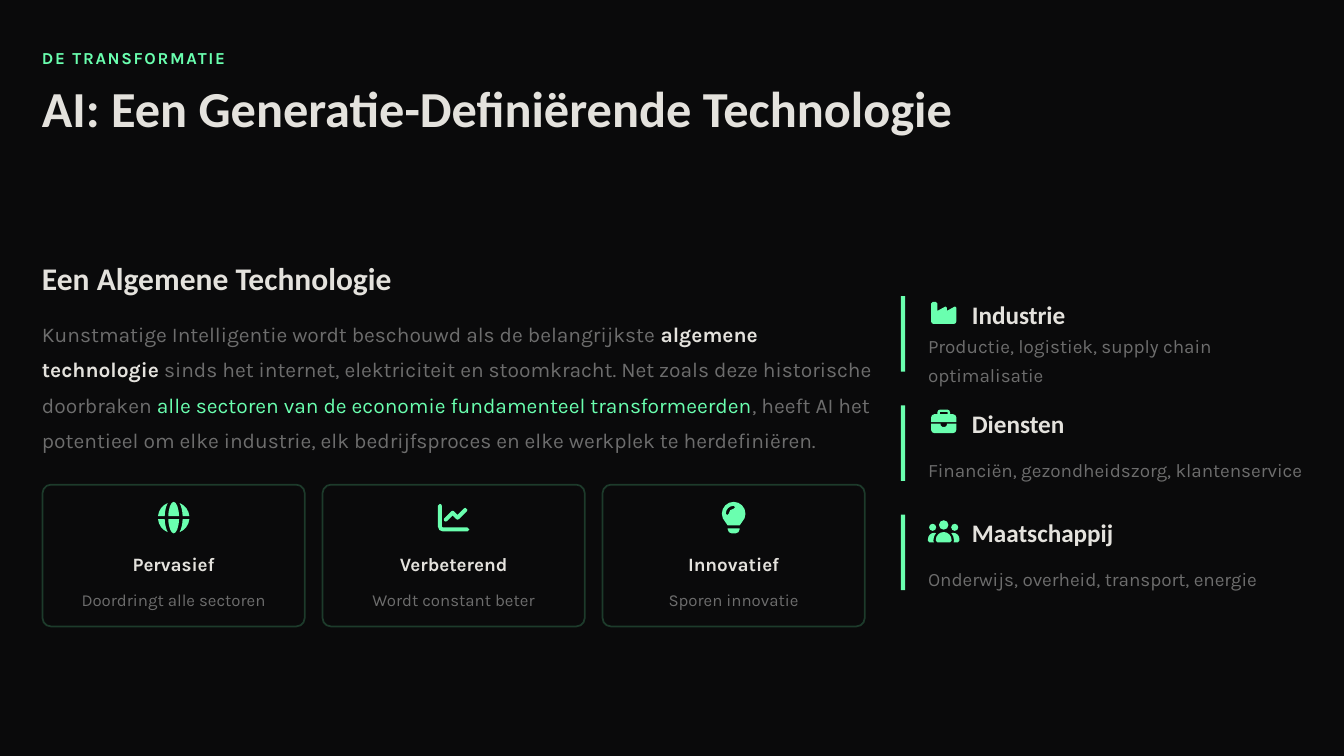
from math import ceil, cos, floor, radians, sin, tan

from lxml.etree import SubElement
from pptx import Presentation
from pptx.dml.color import RGBColor
from pptx.enum.shapes import MSO_SHAPE as Preset
from pptx.enum.text import MSO_ANCHOR as Anchor, PP_ALIGN as Align
from pptx.oxml.ns import qn
from pptx.util import Pt

BACKGROUND = RGBColor(0x0A, 0x0A, 0x0B)
GREEN = RGBColor(0x6A, 0xFF, 0xAF)
LIGHT = RGBColor(0xE4, 0xE2, 0xDD)
GRAY = RGBColor(0x6D, 0x6D, 0x6D)
HEADING, BODY = "Calibri", "Karla"
GRID = 512  # icon units per icon height


# Icon outlines, in grid units: (x, y) is a corner, (x, y, True) belongs to a Bezier curve
def arc(x, y, radius, start, end, radius_y=None):
    radius_y = radius_y or radius
    low, high = sorted((start, end))
    quarters = [90 * i for i in range(floor(low / 90) + 1, ceil(high / 90))]
    stops = sorted([start, *quarters, end], reverse=start > end)

    def place(angle, pull=0):
        a = radians(angle)
        return x + radius * (cos(a) - pull * sin(a)), y + radius_y * (sin(a) + pull * cos(a))

    points = [place(start)]
    for first, last in zip(stops, stops[1:]):
        pull = 4 / 3 * tan(radians(last - first) / 4)
        for point in (place(first, pull), place(last, -pull), place(last)):
            points.append((*point, True))
    return points


def mirror(contours, width):
    return [[(width - x, y, *curve) for x, y, *curve in contour] for contour in contours]


def flip(contours):
    return [[(x, GRID - y, *curve) for x, y, *curve in contour] for contour in contours]


def globe():
    lens = [arc(256, 256, 88, 185.4, 354.6, 256)]
    side = [arc(256, 256, 256, 185.4, 248) + arc(256, 256, 146, 229, 184.4, 314)]
    top = lens + side + mirror(side, GRID)
    return top + flip(top)


def line_chart():
    axes = (arc(32, 64, 32, 180, 360) + arc(80, 400, 16, 180, 90)
            + arc(480, 448, 32, -90, 90) + arc(80, 400, 80, 90, 180))
    trend = (arc(448, 128, 32, -135, 45) + arc(320, 256, 32, 45, 135)
             + [(240, 221)] + arc(128, 288, 32, 45, 225)
             + arc(240, 176, 32, 225, 315) + [(320, 211)])
    return [axes, trend]


def light_bulb():
    glass = arc(192, 192, 192, 135, 405) + [(288, 384), (96, 384)]
    socket = [(288, 432)] + arc(224, 448, 64, 0, 90) + arc(160, 448, 64, 90, 180) + [(96, 432)]
    glint = (arc(192, 192, 80, 270, 180) + arc(88, 192, 24, 0, 180)
             + arc(192, 192, 128, 180, 270) + arc(192, 88, 24, -90, 90))
    return [glass, socket, glint]


def factory():
    return [arc(32, 64, 32, 180, 270) + arc(96, 64, 32, 270, 360) + [(128, 215)]
            + arc(296, 152, 24, 240, 360) + [(320, 215)] + arc(488, 152, 24, 240, 360)
            + arc(464, 432, 48, 0, 90) + arc(48, 432, 48, 90, 180)]


def briefcase():
    lid = (arc(64, 160, 64, 180, 270) + [(128, 96)] + arc(184, 56, 56, 180, 270)
           + arc(328, 56, 56, 270, 360) + [(384, 96)] + arc(448, 160, 64, 270, 360)
           + [(512, 256), (0, 256)])
    handle_gap = [(176, 96)] + arc(184, 56, 8, 180, 270) + arc(328, 56, 8, 270, 360) + [(336, 96)]
    base = ([(512, 288), (320, 288)] + arc(288, 320, 32, 0, 90) + arc(224, 320, 32, 90, 180)
            + [(192, 288), (0, 288)] + arc(64, 416, 64, 180, 90) + arc(448, 416, 64, 90, 0))
    return [lid, handle_gap, base]


def people():
    middle = [arc(320, 128, 96, 0, 360),
              arc(320, 432, 160, 180, 360) + arc(448, 448, 32, 0, 90) + arc(192, 448, 32, 90, 180)]
    side = [arc(96, 176, 72, 0, 360),
            arc(128, 416, 128, 180, 287) + arc(320, 432, 208, 222, 180)
            + [(112, 448), (119, 480)] + arc(32, 448, 32, 90, 180)]
    return middle + side + mirror(side, 640)


def add_icon(page, contours, center, top, size, grid_width=GRID):
    builder = page.shapes.build_freeform(*contours[0][0][:2], scale=Pt(size) / GRID)
    for i, contour in enumerate(contours):
        if i:
            builder.move_to(*contour[0][:2])
        builder.add_line_segments([point[:2] for point in contour[1:]], close=True)
    icon = builder.convert_to_shape(Pt(center - size * grid_width / GRID / 2), Pt(top))
    paint(icon)
    # Join each three curve points into one Bezier segment
    outline = icon._element.find(".//" + qn("a:path"))
    nodes = [node for node in outline if node.tag != qn("a:close")]
    points = [point for contour in contours for point in contour]
    curved = [node for node, point in zip(nodes, points) if len(point) == 3]
    for i in range(0, len(curved), 3):
        curve = outline.makeelement(qn("a:cubicBezTo"))
        curved[i].addprevious(curve)
        for node in curved[i:i + 3]:
            curve.append(node[0])
            outline.remove(node)


def paint(shape):
    shape.shadow.inherit = False
    shape.fill.solid()
    shape.fill.fore_color.rgb = GREEN
    shape.line.fill.background()


# Text: spans are (words, colour, bold)
def add_text(page, left, top, width, height, spans, size, font=BODY,
             spacing=None, align=Align.LEFT, tracking=None):
    box = page.shapes.add_textbox(Pt(left), Pt(top), Pt(width), Pt(height))
    frame = box.text_frame
    frame.word_wrap = True
    frame.vertical_anchor = Anchor.MIDDLE
    frame.margin_left = frame.margin_right = frame.margin_top = frame.margin_bottom = 0
    para = frame.paragraphs[0]
    para.alignment = align
    if spacing:
        para.line_spacing = spacing
    for words, color, bold in spans:
        span = para.add_run()
        span.text = words
        span.font.name, span.font.size, span.font.bold = font, Pt(size), bold
        span.font.color.rgb = color
        if tracking:
            span.font._element.set("spc", str(tracking))


def add_header(page, left, top, width):
    add_text(page, left, top, width, 18, [("DE TRANSFORMATIE", GREEN, True)], 12,
             spacing=1.3, tracking=120)
    add_text(page, left, top + 24, width, 45,
             [("AI: Een Generatie-Definiërende Technologie", LIGHT, True)], 36, HEADING)


def add_introduction(page, left, top, width):
    add_text(page, left, top, width, 27, [("Een Algemene Technologie", LIGHT, True)], 22.5, HEADING)
    add_text(page, left, top + 39.2, width, 97.5, [
        ("Kunstmatige Intelligentie wordt beschouwd als de belangrijkste ", GRAY, False),
        ("algemene technologie", LIGHT, True),
        (" sinds het internet, elektriciteit en stoomkracht. Net zoals deze historische"
         " doorbraken ", GRAY, False),
        ("alle sectoren van de economie fundamenteel transformeerden", GREEN, False),
        (", heeft AI het potentieel om elke industrie, elk bedrijfsproces en elke werkplek"
         " te herdefiniëren.", GRAY, False),
    ], 15, spacing=1.4)


def add_card(page, left, top, width, height, contours, grid_width, title, detail):
    frame = page.shapes.add_shape(Preset.ROUNDED_RECTANGLE, Pt(left), Pt(top), Pt(width), Pt(height))
    frame.shadow.inherit = False
    frame.adjustments[0] = 0.06
    frame.fill.background()
    frame.line.width = Pt(1.25)
    frame.line.color.rgb = GREEN
    color = frame.line._ln.find(".//" + qn("a:srgbClr"))
    SubElement(color, qn("a:alpha")).set("val", "20000")
    add_icon(page, contours, left + width / 2, top + 12.3, 22.5, grid_width)
    add_text(page, left + 9.4, top + 44, width - 18.8, 21, [(title, LIGHT, True)], 13.5,
             spacing=1.3, align=Align.CENTER)
    add_text(page, left + 9.4, top + 70.9, width - 18.8, 18, [(detail, GRAY, False)], 12,
             spacing=1.3, align=Align.CENTER)


def add_sector(page, left, top, width, contours, grid_width, title, detail):
    bar = page.shapes.add_shape(Preset.RECTANGLE, Pt(left), Pt(top), Pt(3), Pt(54))
    paint(bar)
    add_icon(page, contours, left + 30.6, top + 3, 18, grid_width)
    add_text(page, left + 50.7, top, width - 50.7, 24, [(title, LIGHT, True)], 18, HEADING, 1.1)
    add_text(page, left + 19.4, top + 33, width - 19.4, 21, [(detail, GRAY, False)], 13.5,
             spacing=1.3)


def main():
    deck = Presentation()
    deck.slide_width, deck.slide_height = Pt(960), Pt(540)
    page = deck.slides.add_slide(deck.slide_layouts[6])
    page.background.fill.solid()
    page.background.fill.fore_color.rgb = BACKGROUND

    add_header(page, 30, 30, 906)
    add_introduction(page, 30, 185, 597)

    # Three property cards
    cards = [(globe(), GRID, "Pervasief", "Doordringt alle sectoren"),
             (line_chart(), GRID, "Verbeterend", "Wordt constant beter"),
             (light_bulb(), 384, "Innovatief", "Sporen innovatie")]
    for i, card in enumerate(cards):
        add_card(page, 30.4 + 200 * i, 346.2, 187.3, 101.3, *card)

    # Sector list
    sectors = [(factory(), GRID, "Industrie", "Productie, logistiek, supply chain optimalisatie"),
               (briefcase(), GRID, "Diensten", "Financiën, gezondheidszorg, klantenservice"),
               (people(), 640, "Maatschappij", "Onderwijs, overheid, transport, energie")]
    for i, sector in enumerate(sectors):
        add_sector(page, 643.5, 211.5 + 78 * i, 293, *sector)

    deck.save("out.pptx")


if __name__ == "__main__":
    main()
